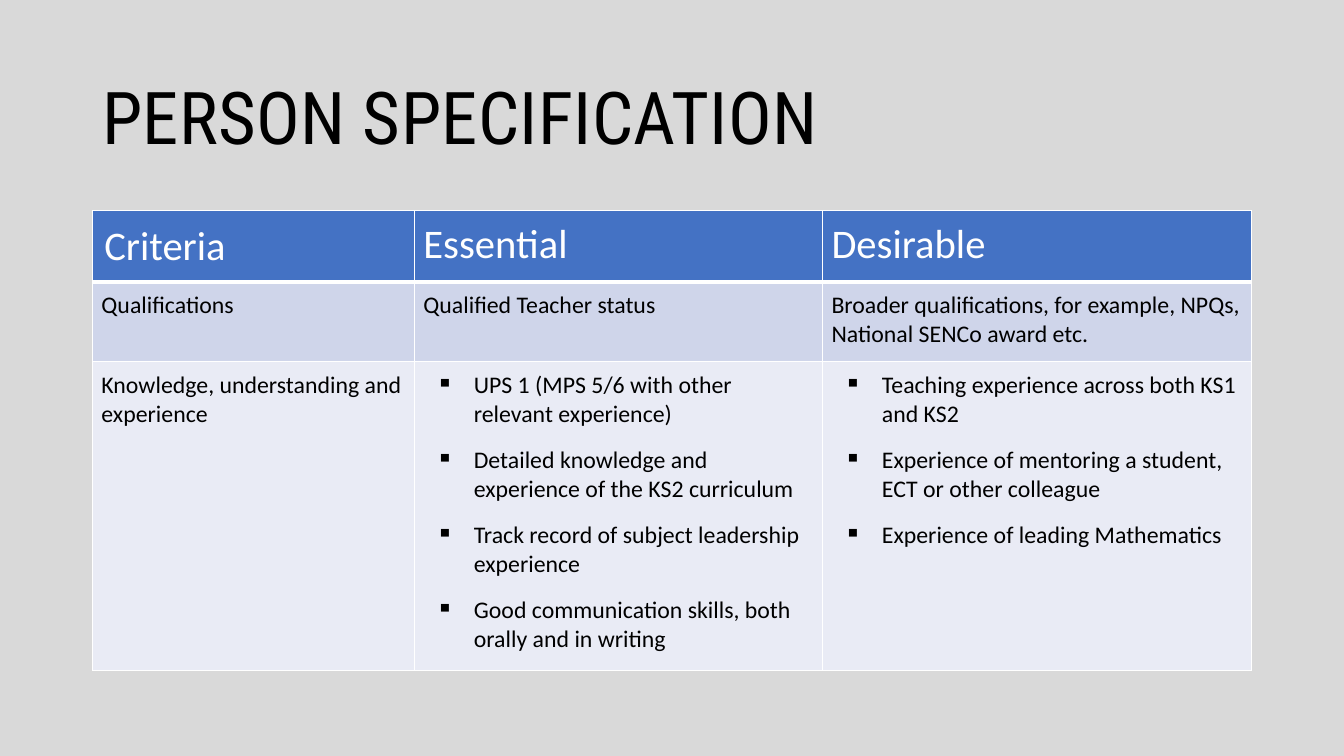
"""Build the person specification slide with its criteria table."""
from dataclasses import dataclass

from lxml import etree
from pptx import Presentation
from pptx.dml.color import RGBColor
from pptx.enum import text as t
from pptx.oxml import ns
from pptx.util import Length, Pt

GREY = RGBColor(0xD9, 0xD9, 0xD9)
BLACK = RGBColor(0x00, 0x00, 0x00)
WHITE = RGBColor(0xFF, 0xFF, 0xFF)
BLUE = RGBColor(0x44, 0x72, 0xC4)
BLUE_MID = RGBColor(0xCF, 0xD5, 0xEA)
BLUE_PALE = RGBColor(0xE9, 0xEB, 0xF5)

LEFT, WIDTH = Pt(66), Pt(828)
COLUMN_WIDTHS = [Pt(230), Pt(291.5), Pt(306.5)]


@dataclass(frozen=True)
class Cell:
    """Paragraphs of one table cell."""
    lines: tuple[str, ...]
    bulleted: bool = False


@dataclass(frozen=True)
class Row:
    """One table row with its look."""
    height: Length
    fill: RGBColor
    color: RGBColor
    size: Length
    cells: tuple[Cell, ...]
    top: Length = Pt(1)
    bottom: Length = Pt(1)


ROWS = [
    Row(Pt(51), BLUE, WHITE, Pt(29),
        (Cell(("Criteria",)), Cell(("Essential",)), Cell(("Desirable",))),
        bottom=Pt(3)),
    Row(Pt(57), BLUE_MID, BLACK, Pt(17),
        (Cell(("Qualifications",)),
         Cell(("Qualified Teacher status",)),
         Cell(("Broader qualifications, for example, NPQs, "
               "National SENCo award etc.",))),
        top=Pt(3)),
    Row(Pt(220.5), BLUE_PALE, BLACK, Pt(17),
        (Cell(("Knowledge, understanding and experience",)),
         Cell(("UPS 1 (MPS 5/6 with other relevant experience)",
               "Detailed knowledge and experience of the KS2 curriculum",
               "Track record of subject leadership experience",
               "Good communication skills, both orally and in writing"), True),
         Cell(("Teaching experience across both KS1 and KS2",
               "Experience of mentoring a student, ECT or other colleague",
               "Experience of leading Mathematics"), True))),
]


def add_run(p, words: str, font: str, size: Length, color: RGBColor):
    """Add one formatted run to a paragraph."""
    r = p.add_run()
    r.text = words
    r.font.name, r.font.size, r.font.bold = font, size, False
    r.font.color.rgb = color
    return r


def add_bullet(p) -> None:
    """Give a paragraph a square bullet with a hanging indent."""
    pPr = p._p.get_or_add_pPr()
    pPr.set("marL", str(Pt(36)))
    pPr.set("indent", str(-Pt(27)))
    etree.SubElement(pPr, ns.qn("a:buChar"), char="▪")


def add_borders(cell, row: Row) -> None:
    """Draw white lines on the four sides of a cell."""
    tcPr = cell._tc.get_or_add_tcPr()
    sides = {"L": Pt(1), "R": Pt(1), "T": row.top, "B": row.bottom}
    for i, (side, width) in enumerate(sides.items()):
        ln = etree.Element(ns.qn(f"a:ln{side}"), w=str(width))
        fill = etree.SubElement(ln, ns.qn("a:solidFill"))
        etree.SubElement(fill, ns.qn("a:srgbClr"), val=str(WHITE))
        tcPr.insert(i, ln)


def fill_cell(cell, content: Cell, row: Row) -> None:
    """Write and style one table cell."""
    cell.fill.solid()
    cell.fill.fore_color.rgb = row.fill
    add_borders(cell, row)
    cell.margin_left = cell.margin_right = Pt(6.5)
    cell.margin_top = cell.margin_bottom = Pt(6.5)
    tf = cell.text_frame
    for i, line in enumerate(content.lines):
        p = tf.add_paragraph() if i else tf.paragraphs[0]
        p.space_before = p.space_after = Pt(6)
        if content.bulleted:
            add_bullet(p)
        add_run(p, line, "Calibri", row.size, row.color)


def add_title(s) -> None:
    """Add the slide heading."""
    sp = s.shapes.add_textbox(LEFT, Pt(44), WIDTH, Pt(89))
    tf = sp.text_frame
    tf.word_wrap = True
    tf.vertical_anchor = t.MSO_ANCHOR.MIDDLE
    p = tf.paragraphs[0]
    p.line_spacing = 0.8
    r = add_run(p, "PERSON SPECIFICATION", "Roboto Condensed", Pt(52), BLACK)
    r.font._element.set("spc", "30")


def add_criteria(s) -> None:
    """Add the criteria table."""
    height = sum(row.height for row in ROWS)
    table = s.shapes.add_table(
        len(ROWS), len(COLUMN_WIDTHS), LEFT, Pt(150.5), WIDTH, height).table
    for column, width in zip(table.columns, COLUMN_WIDTHS):
        column.width = width
    for table_row, row in zip(table.rows, ROWS):
        table_row.height = row.height
        for cell, content in zip(table_row.cells, row.cells):
            fill_cell(cell, content, row)
    criteria = table.cell(0, 0)
    criteria.vertical_anchor = t.MSO_ANCHOR.MIDDLE
    criteria.margin_left = criteria.margin_right = Pt(8.5)
    criteria.margin_top = criteria.margin_bottom = Pt(4.25)


def main() -> None:
    """Build and save the presentation."""
    prs = Presentation()
    prs.slide_width, prs.slide_height = Pt(960), Pt(540)
    s = prs.slides.add_slide(prs.slide_layouts[6])
    s.background.fill.solid()
    s.background.fill.fore_color.rgb = GREY
    add_title(s)
    add_criteria(s)
    prs.save("out.pptx")


if __name__ == "__main__":
    main()
